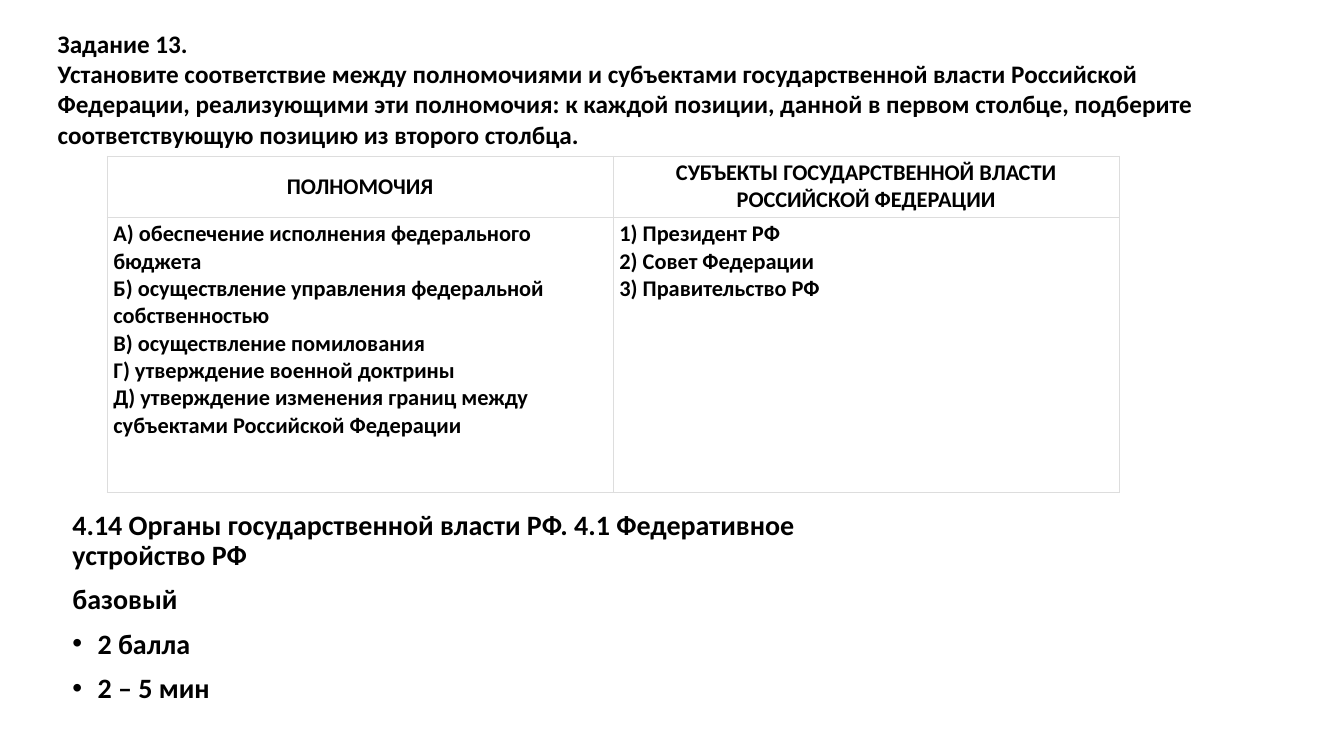
from lxml.etree import SubElement
from pptx import Presentation
from pptx.dml.color import RGBColor
from pptx.enum.text import MSO_ANCHOR, MSO_AUTO_SIZE, PP_ALIGN
from pptx.oxml.ns import qn
from pptx.util import Pt

COLORS = {"text": "000000", "fill": "FFFFFF", "line": "DDDDDD"}

TASK = [
    "Задание 13.",
    "Установите соответствие между полномочиями и субъектами государственной власти "
    "Российской Федерации, реализующими эти полномочия: к каждой позиции, данной в "
    "первом столбце, подберите соответствующую позицию из второго столбца.",
]
HEADS = ["ПОЛНОМОЧИЯ", "СУБЪЕКТЫ ГОСУДАРСТВЕННОЙ ВЛАСТИ РОССИЙСКОЙ ФЕДЕРАЦИИ"]
POWERS = [
    "А) обеспечение исполнения федерального бюджета",
    "Б) осуществление управления федеральной собственностью",
    "В) осуществление помилования",
    "Г) утверждение военной доктрины",
    "Д) утверждение изменения границ между субъектами Российской Федерации",
]
BODIES = ["1) Президент РФ", "2) Совет Федерации", "3) Правительство РФ"]
NOTES = [
    ("4.14 Органы государственной власти РФ. 4.1 Федеративное устройство РФ", False),
    ("базовый", False),
    ("2 балла", True),
    ("2 – 5 мин", True),
]


class Deck:
    font = "Calibri"

    def __init__(self):
        self.prs = Presentation()
        self.prs.slide_width, self.prs.slide_height = Pt(960), Pt(540)
        self.slide = self.prs.slides.add_slide(self.prs.slide_layouts[1])
        self.slide.background.fill.solid()
        self.slide.background.fill.fore_color.rgb = self.color("fill")

    def color(self, name):
        return RGBColor.from_string(COLORS[name])

    def text(self, frame, lines, size, align=PP_ALIGN.LEFT):
        """Fill the frame with one bold paragraph per line."""
        for i, line in enumerate(lines):
            para = frame.paragraphs[0] if i == 0 else frame.add_paragraph()
            para.alignment = align
            run = para.add_run()
            run.text = line
            run.font.name, run.font.size, run.font.bold = self.font, Pt(size), True
            run.font.color.rgb = self.color("text")

    def place(self, shape, left, top, width, height):
        shape.left, shape.top = Pt(left), Pt(top)
        shape.width, shape.height = Pt(width), Pt(height)
        frame = shape.text_frame
        frame.word_wrap = True
        frame.auto_size = MSO_AUTO_SIZE.NONE
        frame.vertical_anchor = MSO_ANCHOR.TOP
        return frame

    def title(self, lines, *box):
        self.text(self.place(self.slide.shapes.title, *box), lines, 18)

    def notes(self, items, *box):
        """Fill the body placeholder; each item is a text and its bullet flag."""
        frame = self.place(self.slide.placeholders[1], *box)
        self.text(frame, [line for line, _ in items], 20)
        for para, (_, dot) in zip(frame.paragraphs, items):
            para.line_spacing, para.space_before = 0.9, Pt(10)
            props = para._p.get_or_add_pPr()
            props.set("marL", str(Pt(18 if dot else 0)))
            props.set("indent", str(Pt(-18 if dot else 0)))
            if dot:
                SubElement(props, qn("a:buFont"), typeface="Arial")
                SubElement(props, qn("a:buChar"), char="•")
            else:
                SubElement(props, qn("a:buNone"))

    def border(self, cell):
        props = cell._tc.get_or_add_tcPr()
        for side in ("lnL", "lnR", "lnT", "lnB"):
            line = SubElement(props, qn("a:" + side), w=str(Pt(0.5)))
            fill = SubElement(line, qn("a:solidFill"))
            SubElement(fill, qn("a:srgbClr"), val=COLORS["line"])

    def table(self, rows, heights, left, top, width):
        """Draw rows of cells, each cell a list of lines; the first row is the head."""
        count = len(rows[0])
        table = self.slide.shapes.add_table(
            len(rows), count, Pt(left), Pt(top), Pt(width), Pt(sum(heights))).table
        table.horz_banding = False
        for col in table.columns:
            col.width = Pt(width / count)
        for r, (row, height) in enumerate(zip(rows, heights)):
            table.rows[r].height = Pt(height)
            for c, lines in enumerate(row):
                cell = table.cell(r, c)
                self.border(cell)
                cell.fill.solid()
                cell.fill.fore_color.rgb = self.color("fill")
                cell.margin_left = cell.margin_right = Pt(4.5)
                cell.margin_top = cell.margin_bottom = Pt(2.25)
                cell.vertical_anchor = MSO_ANCHOR.TOP if r else MSO_ANCHOR.MIDDLE
                align = PP_ALIGN.LEFT if r else PP_ALIGN.CENTER
                self.text(cell.text_frame, lines, 16, align)


def main():
    deck = Deck()
    deck.title(TASK, 34, 16.5, 870.5, 94.5)
    deck.notes(NOTES, 44.5, 361.5, 535, 147)
    deck.table([[[head] for head in HEADS], [POWERS, BODIES]],
               [43, 196.5], 76.5, 111.5, 723)
    deck.prs.save("out.pptx")


if __name__ == "__main__":
    main()
